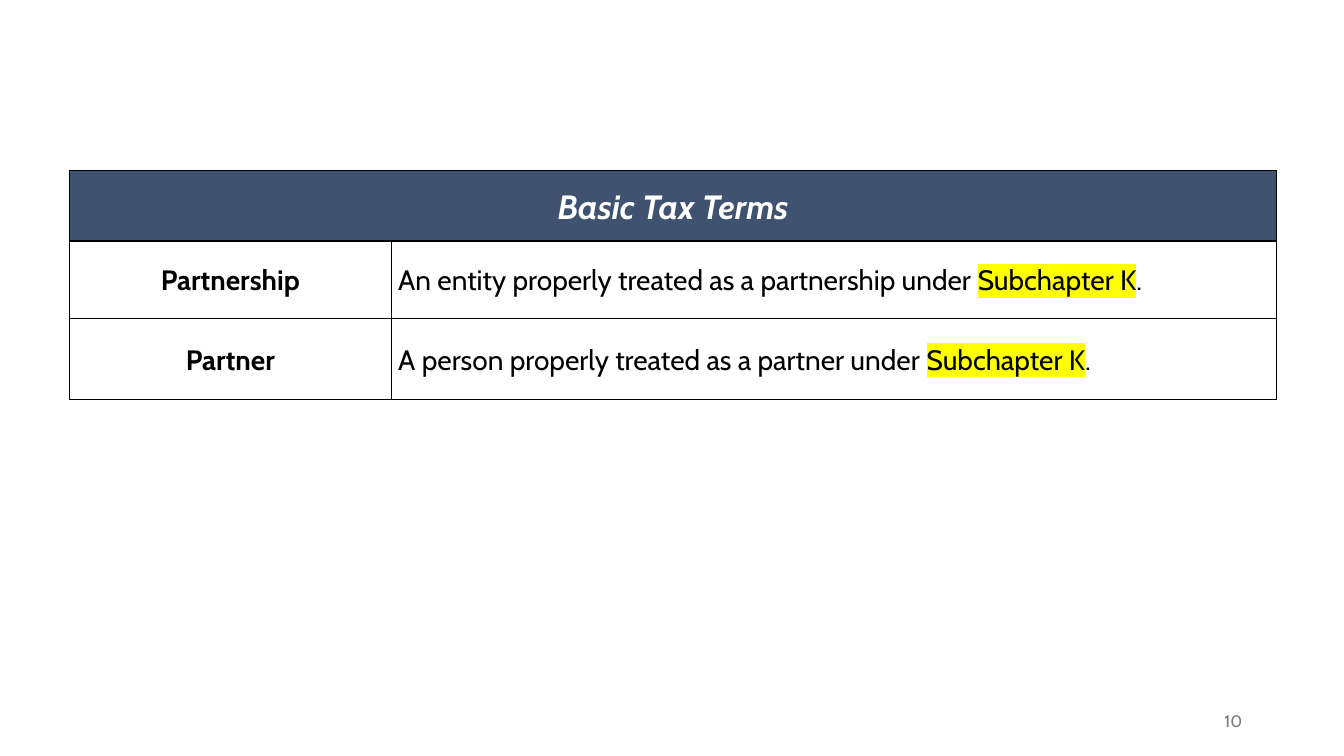
from lxml import etree
from pptx import Presentation
from pptx.dml.color import RGBColor
from pptx.enum import text as t
from pptx.oxml import ns
from pptx.util import Inches, Pt

FONT = "Cabin"
COLORS = {
    "head": "3F5371",
    "white": "FFFFFF",
    "black": "000000",
    "mark": "FFFF00",
    "gray": "797979",
}
LEFT, MID, RIGHT = t.PP_ALIGN.LEFT, t.PP_ALIGN.CENTER, t.PP_ALIGN.RIGHT
COLS = [3.19, 8.78]
ROWS = [0.7, 0.77, 0.8]
MARKED = "Subchapter K"
TERMS = [
    ("Partnership", "An entity properly treated as a partnership under "),
    ("Partner", "A person properly treated as a partner under "),
]


def rgb(name):
    return RGBColor.from_string(COLORS[name])


def add_color(parent, tag, name):
    node = etree.SubElement(parent, ns.qn(tag))
    etree.SubElement(node, ns.qn("a:srgbClr"), val=COLORS[name])


def style(para, size, color, align, bold=False, italic=False):
    para.alignment = align
    font = para.font
    font.name, font.size = FONT, Pt(size)
    font.bold, font.italic = bold, italic
    font.color.rgb = rgb(color)


def add_border(cell):
    # Border lines come before the fill in the cell properties
    props = cell._tc.get_or_add_tcPr()
    for i, side in enumerate(("lnL", "lnR", "lnT", "lnB")):
        line = etree.Element(ns.qn("a:" + side), w=str(Pt(1)))
        add_color(line, "a:solidFill", "black")
        props.insert(i, line)


def fill_cell(cell, parts, size, color, align, bold=False, italic=False):
    cell.vertical_anchor = t.MSO_ANCHOR.MIDDLE
    cell.margin_left = cell.margin_right = Inches(0.07)
    cell.margin_top = cell.margin_bottom = 0
    para = cell.text_frame.paragraphs[0]
    style(para, size, color, align, bold, italic)
    para.line_spacing = 1.07
    para.space_after = Pt(6)
    for part in parts:
        run = para.add_run()
        run.text = part
        if part == MARKED:
            add_color(run._r.get_or_add_rPr(), "a:highlight", "mark")


def add_terms(slide):
    frame = slide.shapes.add_table(
        len(ROWS), len(COLS), Inches(0.69), Inches(1.69),
        Inches(sum(COLS)), Inches(sum(ROWS)))
    table = frame.table
    table.first_row = table.horz_banding = False
    for col, width in zip(table.columns, COLS):
        col.width = Inches(width)
    for row, height in zip(table.rows, ROWS):
        row.height = Inches(height)
    for cell in table.iter_cells():
        cell.fill.background()
        add_border(cell)

    # Header across both columns
    head = table.cell(0, 0)
    head.merge(table.cell(0, 1))
    head.fill.solid()
    head.fill.fore_color.rgb = rgb("head")
    fill_cell(head, ["Basic Tax Terms"], 24, "white", MID, True, True)

    # Terms and meanings
    for i, (term, lead) in enumerate(TERMS, 1):
        fill_cell(table.cell(i, 0), [term], 20, "black", MID, True)
        fill_cell(table.cell(i, 1), [lead, MARKED, "."], 20, "black", LEFT)


def add_number(slide, number):
    box = slide.shapes.add_textbox(
        Inches(9.42), Inches(6.95), Inches(3), Inches(0.4))
    frame = box.text_frame
    frame.word_wrap = True
    frame.vertical_anchor = t.MSO_ANCHOR.MIDDLE
    frame.text = number
    style(frame.paragraphs[0], 12, "gray", RIGHT)


def main():
    deck = Presentation()
    deck.slide_width, deck.slide_height = Inches(13.33), Inches(7.5)
    slide = deck.slides.add_slide(deck.slide_layouts[6])
    add_terms(slide)
    add_number(slide, "10")
    deck.save("out.pptx")


if __name__ == "__main__":
    main()
